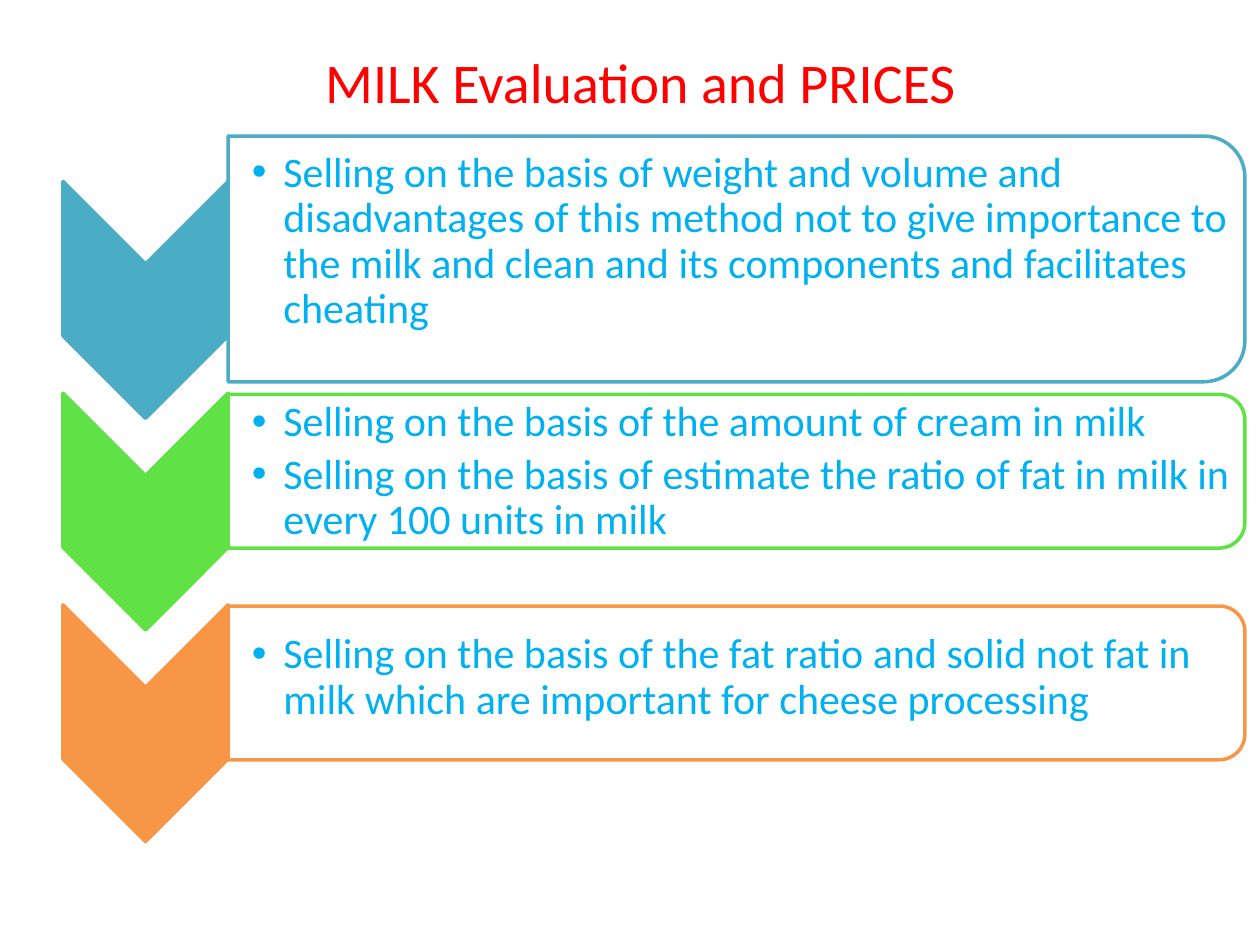
from lxml.etree import SubElement
from pptx import Presentation
from pptx.dml.color import RGBColor
from pptx.enum.shapes import MSO_SHAPE
from pptx.enum.text import MSO_ANCHOR, PP_ALIGN
from pptx.oxml.ns import qn
from pptx.util import Inches, Pt

TITLE = "MILK Evaluation and PRICES"
ROWS = [
    {"hue": "teal", "tall": 1.95, "drop": 0.1, "items": [
        "Selling on the basis of weight and volume and disadvantages of this method "
        "not to give importance to the milk and clean and its components and "
        "facilitates cheating"]},
    {"hue": "green", "tall": 1.22, "drop": 0.03, "items": [
        "Selling on the basis of the amount of cream in milk",
        "Selling on the basis of estimate the ratio of fat in milk in every 100 "
        "units in milk"]},
    {"hue": "orange", "tall": 1.22, "drop": 0.19, "items": [
        "Selling on the basis of the fat ratio and solid not fat in milk which are "
        "important for cheese processing"]},
]
COLORS = {"teal": "4BACC6", "green": "60E146", "orange": "F79646",
          "title": "FF0000", "body": "00B0F0", "white": "FFFFFF"}
WIDE, HIGH = 10, 7.5
PITCH, FIRST = 1.68, 1.44
ARROW = {"x": 0.5, "wide": 1.31, "tall": 1.88}
PANEL = {"x": 1.81, "wide": 8.07, "base": 3.03}
FRAME = {"word_wrap": True, "margin_left": Inches(0.19), "margin_right": Inches(0.02),
         "margin_top": Inches(0.02), "margin_bottom": Inches(0.02),
         "vertical_anchor": MSO_ANCHOR.TOP}
HEAD = {**FRAME, "vertical_anchor": MSO_ANCHOR.MIDDLE}
PARA = {"line_spacing": 0.9, "space_after": Pt(4), "alignment": PP_ALIGN.LEFT}


def shade(name):
    return RGBColor.from_string(COLORS[name])


def apply(item, style):
    for key, value in style.items():
        setattr(item, key, value)


def turn(slide, kind, box, fill, edge):
    x, y, wide, tall = box
    left, top = x + (wide - tall) / 2, y + (tall - wide) / 2
    shape = slide.shapes.add_shape(
        kind, Inches(left), Inches(top), Inches(tall), Inches(wide))
    shape.rotation = 90
    shape.shadow.inherit = False
    shape.fill.solid()
    shape.fill.fore_color.rgb = shade(fill)
    shape.line.color.rgb = shade(edge)
    shape.line.width = Pt(2)
    return shape


def write(slide, box, texts, style, para, size, hue, bullet=False):
    frame = slide.shapes.add_textbox(*map(Inches, box)).text_frame
    apply(frame, style)
    for i, text in enumerate(texts):
        line = frame.add_paragraph() if i else frame.paragraphs[0]
        apply(line, para)
        run = line.add_run()
        run.text = text
        apply(run.font, {"name": "Calibri", "size": Pt(size)})
        run.font.color.rgb = shade(hue)
        if bullet:
            props = line._p.get_or_add_pPr()
            props.set("marL", str(Inches(0.25)))
            props.set("indent", str(Inches(-0.25)))
            SubElement(props, qn("a:buFont")).set("typeface", "Arial")
            SubElement(props, qn("a:buChar")).set("char", "•")


def main():
    """Build the milk pricing slide."""
    deck = Presentation()
    apply(deck, {"slide_width": Inches(WIDE), "slide_height": Inches(HIGH)})
    slide = deck.slides.add_slide(deck.slide_layouts[6])
    write(slide, (0.5, 0.3, WIDE - 1, 0.69), [TITLE], HEAD,
          {"alignment": PP_ALIGN.CENTER}, 32, "title")
    for i, row in enumerate(ROWS):
        hue, tall = row["hue"], row["tall"]
        turn(slide, MSO_SHAPE.CHEVRON,
             (ARROW["x"], FIRST + i * PITCH, ARROW["wide"], ARROW["tall"]), hue, hue)
        top = (FIRST + i * PITCH + 0.01 if i else PANEL["base"] - tall)
        panel = turn(slide, MSO_SHAPE.ROUND_2_SAME_RECTANGLE,
                     (PANEL["x"], top, PANEL["wide"], tall), "white", hue)
        tone = panel.fill._xPr.find(".//" + qn("a:srgbClr"))
        SubElement(tone, qn("a:alpha")).set("val", "90000")
        drop = row["drop"]
        write(slide, (PANEL["x"], top + drop, 8, tall - drop), row["items"],
              FRAME, PARA, 24, "body", True)
    deck.save("out.pptx")


if __name__ == "__main__":
    main()
